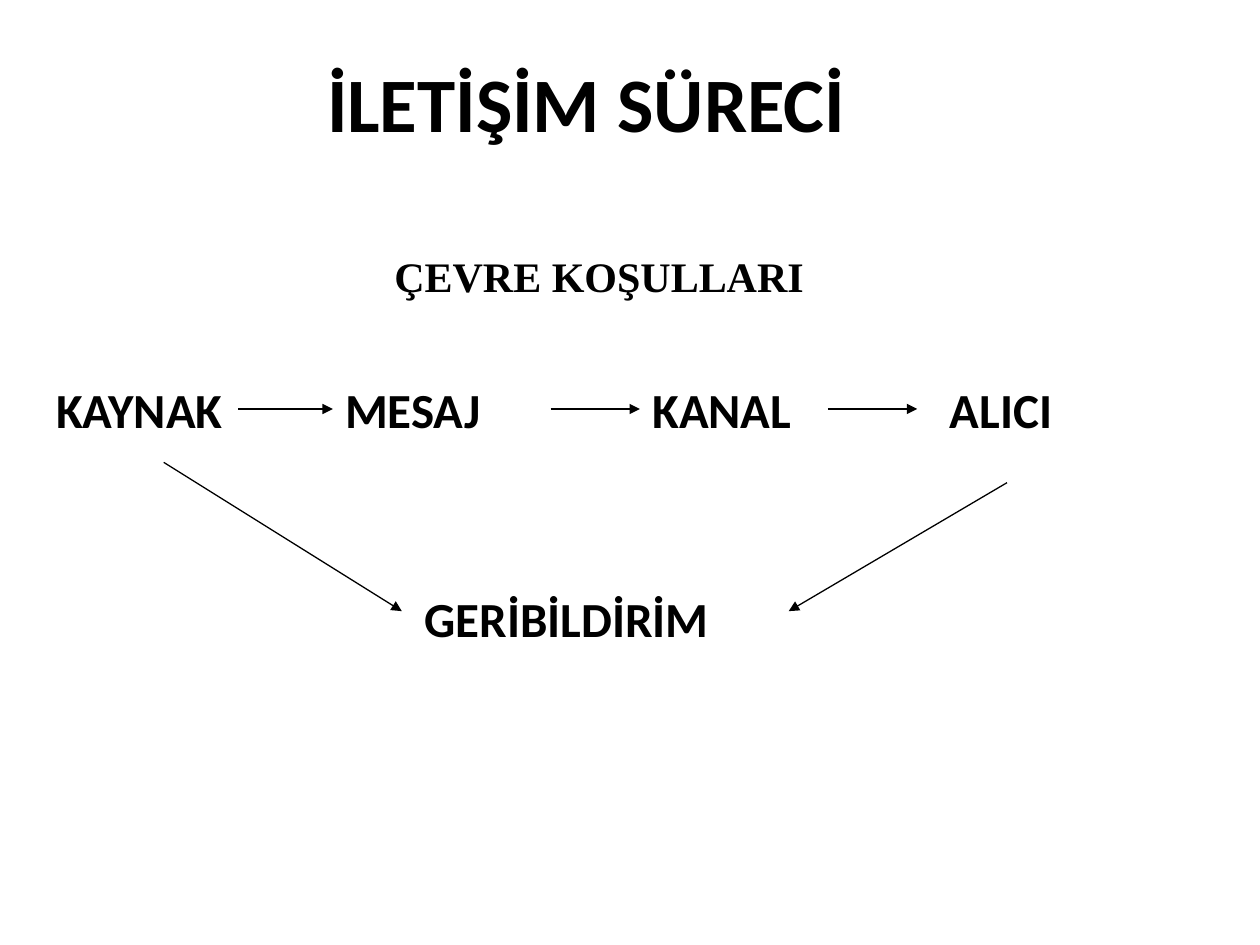
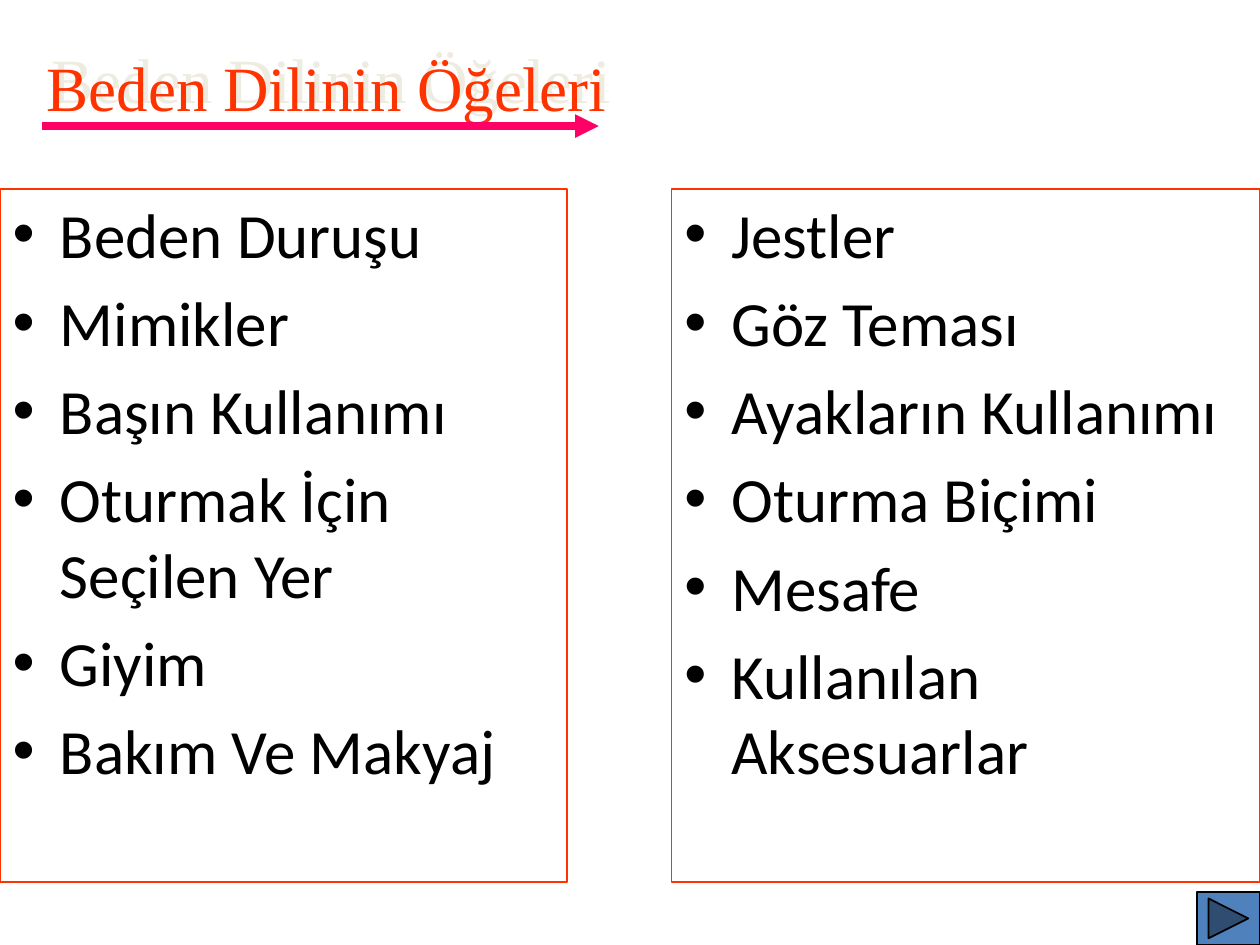
from dataclasses import dataclass

from lxml.etree import SubElement
from pptx import Presentation
from pptx.dml.color import RGBColor
from pptx.enum.shapes import MSO_CONNECTOR as Connector, MSO_SHAPE as Shape
from pptx.enum.text import MSO_ANCHOR as Anchor, MSO_AUTO_SIZE as AutoSize, PP_ALIGN as Align
from pptx.oxml.ns import qn
from pptx.util import Cm, Pt


@dataclass(frozen=True)
class Theme:
    ink: str = "000000"
    accent: str = "FF3300"
    arrow: str = "FF0066"
    button: str = "4F81BD"
    shade: str = "EEECE1"
    sans: str = "Calibri"
    serif: str = "Times New Roman"
    title_size: float = 44
    list_size: float = 36
    step_size: float = 28
    caption_size: float = 24
    thin: float = 0.75
    outline: float = 1
    thick: float = 4.5


THEME = Theme()
TITLE_ONLY, TWO_CONTENT = 5, 3
TOP, LEFT, BOTTOM, RIGHT = range(4)
ROW_TOP, STEP_HEIGHT = 7.52, 1.45
ROW_MIDDLE = ROW_TOP + STEP_HEIGHT / 2

BODY_LANGUAGE = [
    (0, 11.43, ["Beden Duruşu", "Mimikler", "Başın Kullanımı",
                "Oturmak İçin Seçilen Yer", "Giyim", "Bakım Ve Makyaj"]),
    (13.54, 11.86, ["Jestler", "Göz Teması", "Ayakların Kullanımı",
                    "Oturma Biçimi", "Mesafe", "Kullanılan Aksesuarlar"]),
]


def color(value):
    return RGBColor.from_string(value)


def place(shape, left, top, width, height):
    shape.left, shape.top = Cm(left), Cm(top)
    shape.width, shape.height = Cm(width), Cm(height)


def add_run(para, text, size, font=THEME.sans, ink=THEME.ink, bold=False):
    span = para.add_run()
    span.text = text
    span.font.name = font
    span.font.size = Pt(size)
    span.font.bold = bold
    span.font.color.rgb = color(ink)


def set_line(shape, ink, width):
    shape.line.color.rgb = color(ink)
    shape.line.width = Pt(width)


def set_title(page, text, bounds, align, size, **style):
    title = page.shapes.title
    place(title, *bounds)
    frame = title.text_frame
    frame.auto_size = AutoSize.NONE
    frame.vertical_anchor = Anchor.MIDDLE
    para = frame.paragraphs[0]
    para.alignment = align
    add_run(para, text, size, **style)
    return title


def add_shade(shape):
    """Cast a pale shadow up and to the right of unfilled text."""
    effects = SubElement(shape.element.spPr, qn("a:effectLst"))
    shadow = SubElement(effects, qn("a:outerShdw"), dist="63500", dir="18300000", algn="ctr")
    SubElement(shadow, qn("a:srgbClr"), val=THEME.shade)


def add_label(page, text, left, width, top=ROW_TOP, height=STEP_HEIGHT,
              size=THEME.step_size, font=THEME.sans, inset=0.25):
    box = page.shapes.add_textbox(Cm(left), Cm(top), Cm(width), Cm(height))
    frame = box.text_frame
    frame.word_wrap = True
    frame.margin_left = Cm(inset)
    add_run(frame.paragraphs[0], text, size, font, bold=True)
    return box


def add_arrow(page, start, end, ink=THEME.ink, width=THEME.thin):
    arrow = page.shapes.add_connector(Connector.STRAIGHT, *map(Cm, start + end))
    set_line(arrow, ink, width)
    SubElement(arrow.line._get_or_add_ln(), qn("a:tailEnd"), type="triangle")
    SubElement(arrow.element.spPr, qn("a:effectLst"))
    return arrow


def join_boxes(page, source, target):
    arrow = add_arrow(page, (0, 0), (1, 1))
    arrow.begin_connect(source, RIGHT)
    arrow.end_connect(target, LEFT)


def fill_list(box, left, width, items):
    place(box, left, 3.81, width, 13.97)
    set_line(box, THEME.accent, THEME.thin)
    frame = box.text_frame
    frame.auto_size = AutoSize.NONE
    for index, item in enumerate(items):
        para = frame.add_paragraph() if index else frame.paragraphs[0]
        add_run(para, item, THEME.list_size)


def add_next_button(page):
    button = page.shapes.add_shape(Shape.ACTION_BUTTON_FORWARD_OR_NEXT,
                                   Cm(24.13), Cm(17.98), Cm(1.27), Cm(1.07))
    button.shadow.inherit = False
    button.fill.solid()
    button.fill.fore_color.rgb = color(THEME.button)
    set_line(button, THEME.ink, THEME.outline)


def build_process(deck):
    page = deck.slides.add_slide(deck.slide_layouts[TITLE_ONLY])
    set_title(page, "İLETİŞİM SÜRECİ", (0, 0.64, 23.65, 2.82), Align.CENTER,
              THEME.title_size, bold=True)
    add_label(page, "ÇEVRE KOŞULLARI", 7.7, 8.81, top=4.93, height=1.27,
              size=THEME.caption_size, font=THEME.serif)
    source = add_label(page, "KAYNAK", 0, 4.8, inset=1.13)
    message = add_label(page, "MESAJ", 6.71, 4.39)
    channel = add_label(page, "KANAL", 12.9, 4.39)
    add_label(page, "ALICI", 18.9, 3.1)
    add_label(page, "GERİBİLDİRİM", 8.31, 8.2, top=11.73)

    join_boxes(page, source, message)
    join_boxes(page, message, channel)
    add_arrow(page, (16.69, ROW_MIDDLE), (18.49, ROW_MIDDLE))
    add_arrow(page, (3.3, 9.32), (8.1, 12.32))
    add_arrow(page, (20.3, 9.73), (15.9, 12.32))


def build_body_language(deck):
    page = deck.slides.add_slide(deck.slide_layouts[TWO_CONTENT])
    title = set_title(page, "Beden Dilinin Öğeleri", (0.69, 0.84, 12.2, 1.78), Align.LEFT,
                      THEME.list_size, font=THEME.serif, ink=THEME.accent)
    add_shade(title)
    for box, column in zip(list(page.placeholders)[1:], BODY_LANGUAGE):
        fill_list(box, *column)
    add_arrow(page, (0.84, 2.54), (12.07, 2.54), THEME.arrow, THEME.thick)
    add_next_button(page)


def main():
    deck = Presentation()
    deck.slide_width, deck.slide_height = Cm(25.4), Cm(19.05)
    build_process(deck)
    build_body_language(deck)
    deck.save("out.pptx")


if __name__ == "__main__":
    main()
